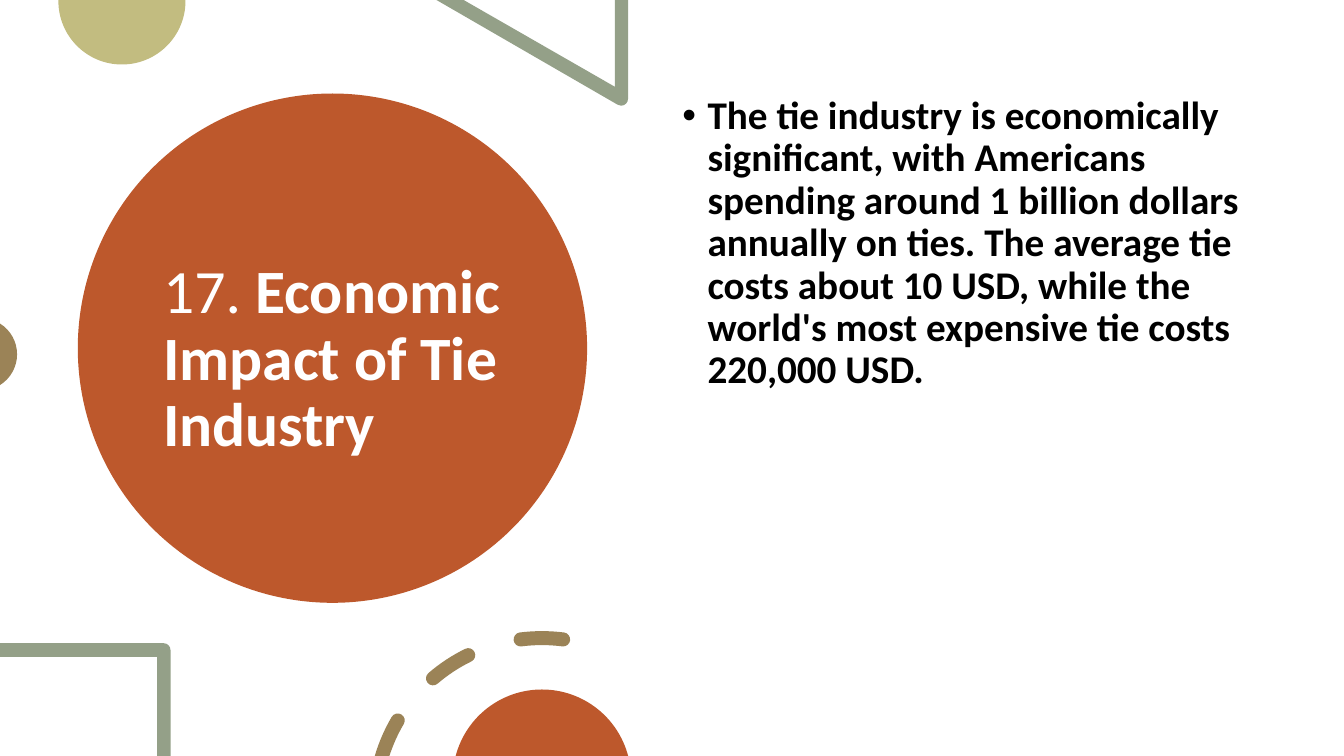
from itertools import pairwise
from math import cos, radians, sin, tan

from lxml import etree
from pptx import Presentation
from pptx.dml.color import RGBColor
from pptx.enum.shapes import MSO_SHAPE
from pptx.enum.text import MSO_ANCHOR, MSO_AUTO_SIZE, PP_ALIGN
from pptx.oxml.ns import qn
from pptx.util import Pt

ELLIPSE = MSO_SHAPE.OVAL
LEFT = PP_ALIGN.LEFT
TOP, MIDDLE = MSO_ANCHOR.TOP, MSO_ANCHOR.MIDDLE
NO_AUTOFIT = MSO_AUTO_SIZE.NONE

# Content
TITLE = [("17. ", False), ("Economic Impact of Tie Industry", True)]
BODY = [("The tie industry is economically significant, with Americans spending "
         "around 1 billion dollars annually on ties. The average tie costs about "
         "10 USD, while the world's most expensive tie costs 220,000 USD.", True)]

# Colours and measures (points)
RUST, OLIVE, SAGE, BRONZE = "BD582C", "C2BC80", "94A088", "9B8357"
WHITE, BLACK = "FFFFFF", "000000"
WIDTH, HEIGHT = 960, 540
RING_X, RING_Y, RING_RADIUS, HALF_STROKE = 387.1, 575.3, 119.5, 5
DASHES = [(229.4, 243.9), (262.7, 277.3)]


def color(hex_value):
    return RGBColor.from_string(hex_value)


def paint(shape, fill):
    shape.shadow.inherit = False
    shape.fill.solid()
    shape.fill.fore_color.rgb = color(fill)
    shape.line.fill.background()


# An outline is a list of steps: one point for a line, three for a Bezier curve
def lines(*points):
    return [(point,) for point in points]


def on_circle(x, y, radius, angle):
    """Point at an angle in degrees, clockwise from the right."""
    return x + radius * cos(radians(angle)), y + radius * sin(radians(angle))


def arc(x, y, radius, *angles):
    """Start point, then one curve between each two angles."""
    steps = lines(on_circle(x, y, radius, angles[0]))
    for start, end in pairwise(angles):
        handle = radius * 4 / 3 * tan(radians(end - start) / 4)
        first, last = on_circle(x, y, radius, start), on_circle(x, y, radius, end)
        steps.append((on_circle(*first, handle, start + 90),
                      on_circle(*last, handle, end - 90), last))
    return steps


def cap(angle, turn):
    """Half circle at the end of a stroke of the ring."""
    center = on_circle(RING_X, RING_Y, RING_RADIUS, angle)
    return arc(*center, HALF_STROKE, turn, turn + 90, turn + 180)[1:]


def cut_dash(outer_start, inner_start, end):
    return (arc(RING_X, RING_Y, RING_RADIUS + HALF_STROKE, outer_start, end)
            + cap(end, end)
            + arc(RING_X, RING_Y, RING_RADIUS - HALF_STROKE, end, inner_start)[1:])


def dash(start, end):
    return cut_dash(start, start, end) + cap(start, start + 180)


def add_outline(slide, fill, *contours):
    builder = None
    for contour in contours:
        points = [(Pt(x), Pt(y)) for step in contour for x, y in step]
        if builder is None:
            builder = slide.shapes.build_freeform(*points[0], scale=1.0)
        else:
            builder.move_to(*points[0])
        builder.add_line_segments(points[1:], close=True)
    shape = builder.convert_to_shape()
    paint(shape, fill)

    # Join each three curve points into one Bezier element
    segments = iter(list(shape._element.iter(qn("a:lnTo"))))
    for contour in contours:
        for step in contour[1:]:
            first, *others = [next(segments) for _ in step]
            if others:
                first.tag = qn("a:cubicBezTo")
            for other in others:
                first.append(other[0])
                other.getparent().remove(other)


def write(shape, runs, box, size, font_color, anchor, space_before=0):
    shape.left, shape.top, shape.width, shape.height = [Pt(v) for v in box]
    frame = shape.text_frame
    frame.word_wrap = True
    frame.auto_size = NO_AUTOFIT
    frame.vertical_anchor = anchor
    paragraph = frame.paragraphs[0]
    paragraph.alignment = LEFT
    paragraph.line_spacing = 0.9
    paragraph.space_before = Pt(space_before)
    for text, bold in runs:
        run = paragraph.add_run()
        run.text = text
        run.font.name = "Calibri"
        run.font.size = Pt(size)
        run.font.bold = bold
        run.font.color.rgb = color(font_color)
    return paragraph


def add_bullet(paragraph, indent):
    properties = paragraph._p.get_or_add_pPr()
    properties.set("marL", str(Pt(indent)))
    properties.set("indent", str(-Pt(indent)))
    etree.SubElement(properties, qn("a:buFont")).set("typeface", "Arial")
    etree.SubElement(properties, qn("a:buChar")).set("char", "•")


presentation = Presentation()
presentation.slide_width, presentation.slide_height = Pt(WIDTH), Pt(HEIGHT)
slide = presentation.slides.add_slide(presentation.slide_layouts[1])
title, body = slide.placeholders

# Title disc, placed behind the title
disc = slide.shapes.add_shape(ELLIPSE, Pt(55.6), Pt(66.8), Pt(363.8), Pt(363.8))
paint(disc, RUST)
slide.shapes._spTree.insert(2, disc._element)
write(title, TITLE, (109.4, 97.2, 290.9, 320.4), 44, WHITE, MIDDLE)

# Shapes at the top and left edges
add_outline(slide, OLIVE, lines((132.5, 0), (41.8, 0)) + arc(87.1, 0.7, 45.4, 180, 90, 0))
add_outline(slide, SAGE, lines((448.6, 0), (439.2, 0), (439.2, 62), (331.2, 0), (311.8, 0))
            + arc(443.7, 70.6, 4.9, 120, 90, 0))
add_outline(slide, BRONZE, arc(-13.7, 253.1, 25.9, -58, 0, 58))

# Body
paragraph = write(body, BODY, (480.2, 64.8, 414, 385.2), 28, BLACK, TOP, space_before=10)
add_bullet(paragraph, 18)
slide.shapes._spTree.append(body._element)

# Shapes at the bottom edge
add_outline(slide, SAGE, arc(116.8, 464.4, 5, 0, -90)
            + lines((0, 459.4), (0, 469.2), (112.2, 469.2), (112.2, HEIGHT), (121.8, HEIGHT)))
add_outline(slide, BRONZE, cut_dash(196.5, 197.95, 210.5),
            *[dash(start, end) for start, end in DASHES])
add_outline(slide, RUST, arc(387.1, 556.2, 63.7, 194.7, 270, 345.3))

presentation.save("out.pptx")
